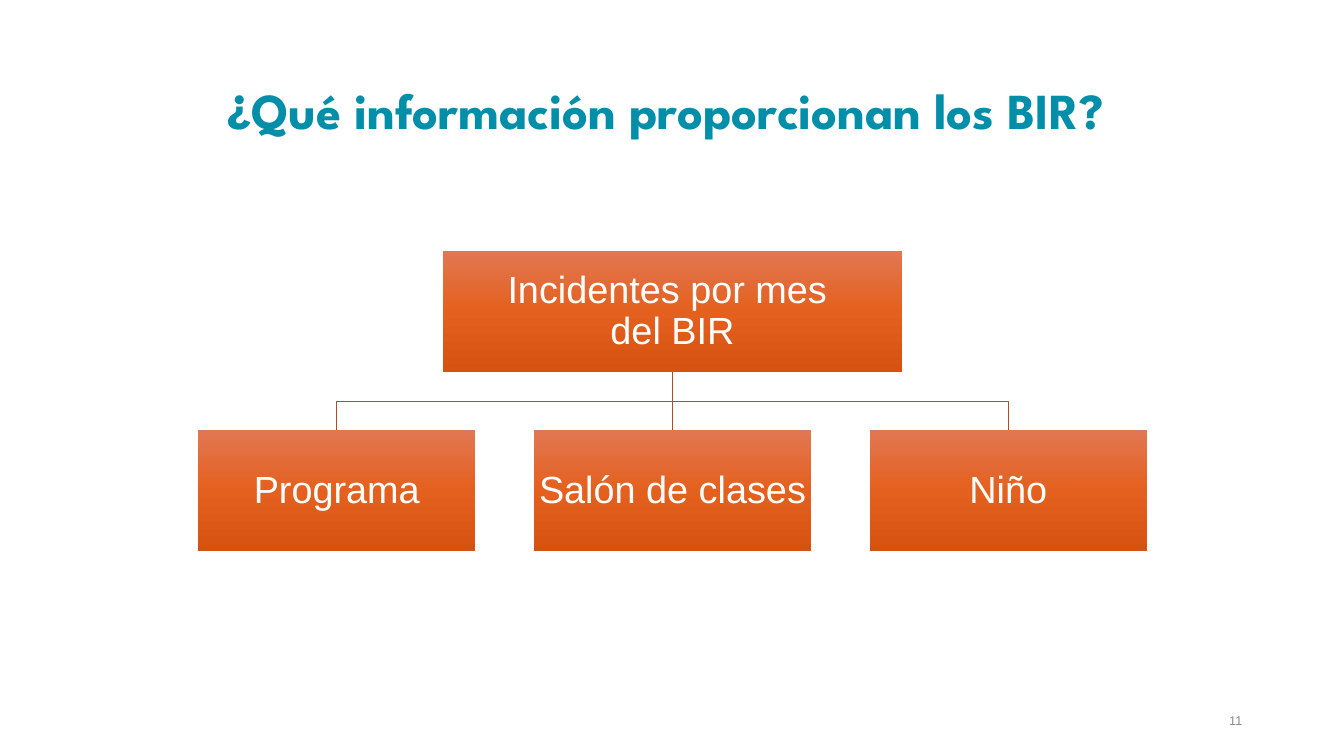
from copy import deepcopy

from pptx import Presentation
from pptx import util as u
from pptx.dml.color import RGBColor
from pptx.enum import shapes, text
from pptx.oxml import ns
from lxml import etree

TEAL = RGBColor(0x00, 0x8E, 0xA9)
GREY = RGBColor(0x8C, 0x8C, 0x8C)
WHITE = RGBColor(0xFF, 0xFF, 0xFF)
RUST = RGBColor(0xAF, 0x4F, 0x1F)
ORANGE_BLEND = [
    (0, RGBColor(0xE1, 0x77, 0x52)),
    (0.5, RGBColor(0xE4, 0x60, 0x1E)),
    (1, RGBColor(0xD5, 0x52, 0x11)),
]

TITLE_FONT = {"name": "League Spartan", "size": u.Pt(36), "bold": True}
NUMBER_FONT = {"name": "Arial", "size": u.Pt(9)}
BOX_FONT = {"name": "Arial", "size": u.Pt(27)}

CENTRE = 6.67
BOX_HEIGHT = 1.2
ROOT_TOP, ROOT_WIDTH = 2.49, 4.56
CHILD_TOP, CHILD_WIDTH, CHILD_PITCH = 4.27, 2.75, 3.33
CHILDREN = ["Programa", "Salón de clases", "Niño"]


def apply(target, values):
    for name, value in values.items():
        setattr(target, name, value)


class ChartSlide:
    def __init__(self, deck):
        self.slide = deck.slides.add_slide(deck.slide_layouts[5])
        self.line_format = {"width": u.Pt(0.5)}

    def set_text(self, holder, words, font, colour, align, spacing=1.0, inset=None):
        frame = holder.text_frame
        frame.text = words
        apply(frame, {"word_wrap": True, "vertical_anchor": text.MSO_ANCHOR.MIDDLE})
        if inset is not None:
            sides = ("left", "top", "right", "bottom")
            apply(frame, {f"margin_{side}": u.Inches(inset) for side in sides})
        paragraph = frame.paragraphs[0]
        apply(paragraph, {"alignment": align, "line_spacing": spacing})
        for run in paragraph.runs:
            apply(run.font, font)
            run.font.color.rgb = colour

    def title(self, words, left, top, width, height):
        heading = self.slide.shapes.title
        bounds = {"left": left, "top": top, "width": width, "height": height}
        apply(heading, {side: u.Inches(size) for side, size in bounds.items()})
        self.set_text(heading, words, TITLE_FONT, TEAL, text.PP_ALIGN.CENTER, 0.9)

    def page_number(self, words, *bounds):
        number = self.slide.shapes.add_textbox(*map(u.Inches, bounds))
        self.set_text(number, words, NUMBER_FONT, GREY, text.PP_ALIGN.RIGHT)

    def box(self, words, centre, top, width, inset):
        bounds = (centre - width / 2, top, width, BOX_HEIGHT)
        node = self.slide.shapes.add_shape(
            shapes.MSO_SHAPE.RECTANGLE, *map(u.Inches, bounds))
        node.shadow.inherit = False
        node.line.fill.background()
        node.fill.gradient()
        node.fill.gradient_angle = 270
        stops = node._element.spPr.find(".//" + ns.qn("a:gsLst"))
        stops.append(deepcopy(stops[0]))
        for stop, (position, colour) in zip(node.fill.gradient_stops, ORANGE_BLEND):
            stop.position = position
            stop.color.rgb = colour
        self.set_text(node, words, BOX_FONT, WHITE, text.PP_ALIGN.CENTER, 0.9, inset)

    def branch(self, start_x, start_y, end_x, end_y):
        x1, y1, x2, y2 = map(u.Inches, (start_x, start_y, end_x, end_y))
        if x1 == x2:
            link = self.slide.shapes.add_connector(
                shapes.MSO_CONNECTOR.STRAIGHT, x1, y1, x2, y2)
            etree.SubElement(link._element.spPr, ns.qn("a:effectLst"))
        else:
            middle = (y1 + y2) // 2
            outline = self.slide.shapes.build_freeform(x1, y1)
            outline.add_line_segments([(x1, middle), (x2, middle), (x2, y2)], close=False)
            link = outline.convert_to_shape()
            link.shadow.inherit = False
            link.fill.background()
        apply(link.line, self.line_format)
        link.line.color.rgb = RUST


def main():
    deck = Presentation()
    apply(deck, {"slide_width": u.Inches(13.33), "slide_height": u.Inches(7.5)})
    page = ChartSlide(deck)
    page.title("¿Qué información proporcionan los BIR? ", 0.92, 0.4, 11.5, 1.45)
    page.page_number("11", 9.42, 6.95, 3, 0.4)

    centres = [CENTRE + (i - 1) * CHILD_PITCH for i in range(len(CHILDREN))]
    for centre in reversed(centres):
        page.branch(CENTRE, ROOT_TOP + BOX_HEIGHT, centre, CHILD_TOP)
    page.box("Incidentes por mes \vdel BIR", CENTRE, ROOT_TOP, ROOT_WIDTH, 0.2)
    for child, centre in zip(CHILDREN, centres):
        page.box(child, centre, CHILD_TOP, CHILD_WIDTH, 0.02)
    deck.save("out.pptx")


if __name__ == "__main__":
    main()
